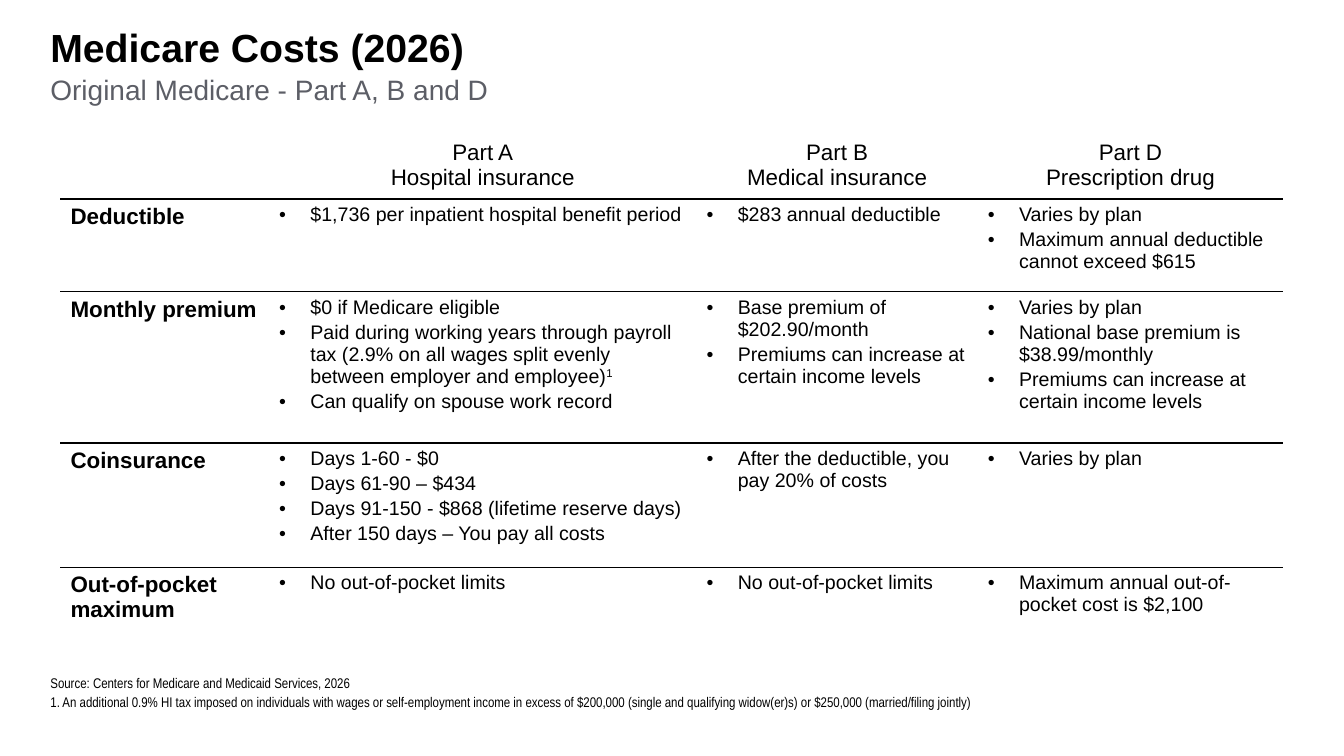
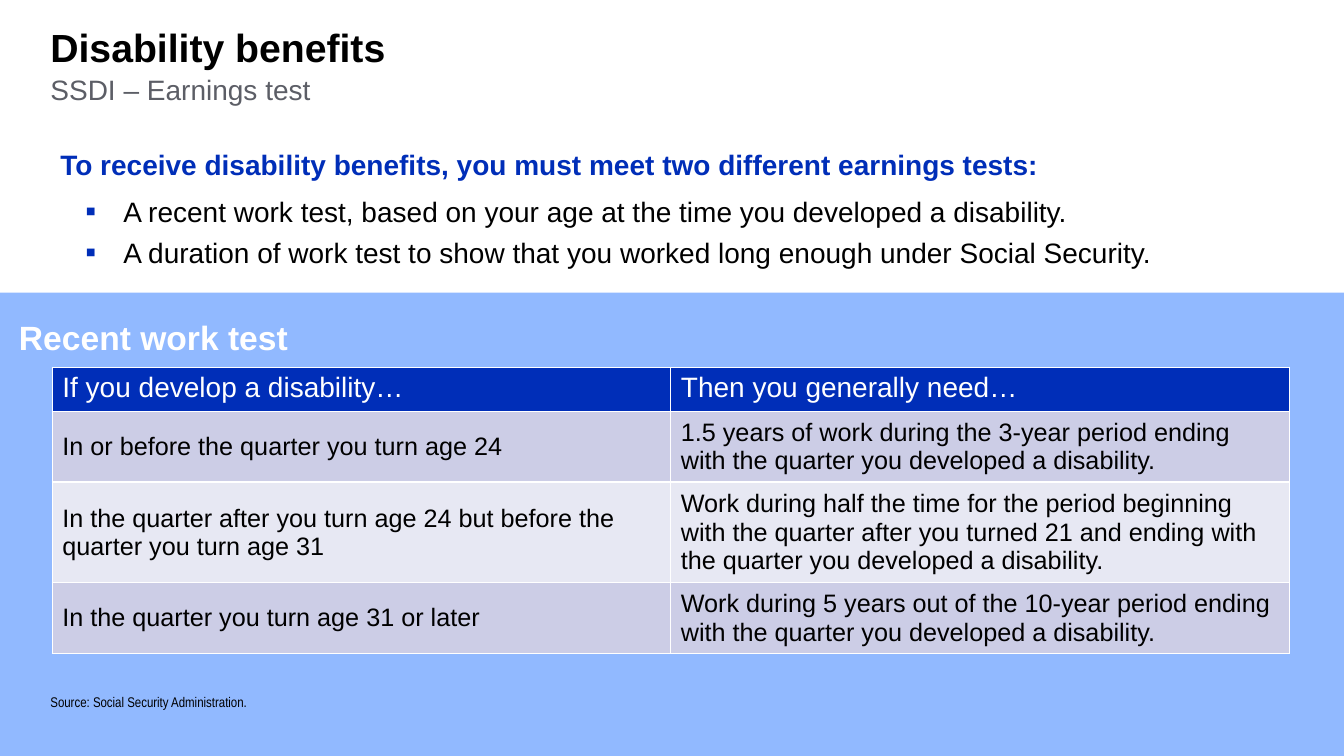
"""Build two slides on Medicare costs and disability earnings tests."""
from pptx import Presentation
from pptx.dml.color import RGBColor
from pptx.enum.shapes import MSO_SHAPE
from pptx.enum.text import MSO_ANCHOR, PP_ALIGN
from pptx.oxml.ns import qn
from pptx.util import Pt
from lxml.etree import SubElement

COLORS = {
    "text": "000000", "white": "FFFFFF", "subtitle": "5C5E66",
    "blue": "002EB8", "band": "91B9FF", "row": "CCCDE6", "row_alt": "E7E8F3",
}
PLAIN_TABLE = "{2D5ABB26-0587-4C30-8999-92F81FD0307C}"
MARGIN = 36
DOT = {"char": "•", "left": 22.3, "hang": 22.3, "color": "text", "size": 100}
SQUARE = {"char": "▪", "left": 45, "hang": 27, "color": "blue", "size": 110}

COSTS = [
    ("Deductible",
     ["$1,736 per inpatient hospital benefit period"],
     ["$283 annual deductible"],
     ["Varies by plan", "Maximum annual deductible cannot exceed $615"]),
    ("Monthly premium",
     ["$0 if Medicare eligible",
      "Paid during working years through payroll tax (2.9% on all wages "
      "split evenly between employer and employee)^1",
      "Can qualify on spouse work record"],
     ["Base premium of $202.90/month",
      "Premiums can increase at certain income levels"],
     ["Varies by plan", "National base premium is $38.99/monthly",
      "Premiums can increase at certain income levels"]),
    ("Coinsurance",
     ["Days 1-60 - $0", "Days 61-90 – $434",
      "Days 91-150 - $868 (lifetime reserve days)",
      "After 150 days – You pay all costs"],
     ["After the deductible, you pay 20% of costs"],
     ["Varies by plan"]),
    ("Out-of-pocket maximum",
     ["No out-of-pocket limits"],
     ["No out-of-pocket limits"],
     ["Maximum annual out-of-pocket cost is $2,100"]),
]
PARTS = [("Part A", "Hospital insurance"), ("Part B", "Medical insurance"),
         ("Part D", "Prescription drug")]
WORK_TEST = [
    ("If you develop a disability…", "Then you generally need…"),
    ("In or before the quarter you turn age 24",
     "1.5 years of work during the 3-year period ending with the quarter "
     "you developed a disability."),
    ("In the quarter after you turn age 24 but before the quarter you turn age 31",
     "Work during half the time for the period beginning with the quarter "
     "after you turned 21 and ending with the quarter you developed a disability."),
    ("In the quarter you turn age 31 or later",
     "Work during 5 years out of the 10-year period ending with the quarter "
     "you developed a disability."),
]


def rgb(name):
    return RGBColor.from_string(COLORS[name])


def add_bullet(p, bullet):
    pPr = p._p.get_or_add_pPr()
    pPr.set("marL", str(Pt(bullet["left"])))
    pPr.set("indent", str(-Pt(bullet["hang"])))
    clr = SubElement(pPr, qn("a:buClr"))
    SubElement(clr, qn("a:srgbClr"), val=COLORS[bullet["color"]])
    SubElement(pPr, qn("a:buSzPct"), val=str(bullet["size"] * 1000))
    SubElement(pPr, qn("a:buFont"), typeface="Arial")
    SubElement(pPr, qn("a:buChar"), char=bullet["char"])


def write(tf, lines, size, color="text", bold=False, font="Arial", after=0,
          align=PP_ALIGN.LEFT, bullet=None, spacing=None, more=False):
    for i, line in enumerate(lines):
        p = tf.add_paragraph() if i or more else tf.paragraphs[0]
        if bullet:
            add_bullet(p, bullet)
        p.alignment = align
        p.space_after = Pt(after)
        if spacing:
            p.line_spacing = spacing
        body, _, note = line.partition("^")
        for text in filter(None, (body, note)):
            r = p.add_run()
            r.text = text
            r.font.size = Pt(size)
            r.font.name = font
            r.font.bold = bold
            r.font.color.rgb = rgb(color)
        if note:
            r._r.get_or_add_rPr().set("baseline", "30000")


def add_text(s, x, y, w, h, inset=True, anchor=MSO_ANCHOR.TOP):
    tf = s.shapes.add_textbox(Pt(x), Pt(y), Pt(w), Pt(h)).text_frame
    tf.word_wrap = True
    tf.vertical_anchor = anchor
    if not inset:
        tf.margin_left = tf.margin_right = tf.margin_top = tf.margin_bottom = 0
    return tf


def add_slide(prs, title, subtitle):
    s = prs.slides.add_slide(prs.slide_layouts[6])
    write(add_text(s, MARGIN, 16.5, 740, 34, False), [title], 28, bold=True)
    write(add_text(s, MARGIN, 52, 740, 24.5, False), [subtitle], 20, "subtitle")
    return s


def add_source(s, lines):
    tf = add_text(s, MARGIN, 481.6, 888, 26, False, MSO_ANCHOR.BOTTOM)
    write(tf, lines, 10, font="Arial Narrow", after=1.5)


def add_table(s, x, y, widths, heights):
    frame = s.shapes.add_table(len(heights), len(widths), Pt(x), Pt(y),
                               Pt(sum(widths)), Pt(sum(heights)))
    table = frame.table
    table.first_row = table.horz_banding = False
    table._tbl.tblPr.find(qn("a:tableStyleId")).text = PLAIN_TABLE
    for col, w in zip(table.columns, widths):
        col.width = Pt(w)
    for row, h in zip(table.rows, heights):
        row.height = Pt(h)
    return table


def style_cell(cell, fill, sides, line):
    tcPr = cell._tc.get_or_add_tcPr()
    for side in sides:
        ln = SubElement(tcPr, qn(f"a:ln{side}"), w=str(Pt(1)))
        solid = SubElement(ln, qn("a:solidFill"))
        SubElement(solid, qn("a:srgbClr"), val=COLORS[line])
    cell.fill.solid()
    cell.fill.fore_color.rgb = rgb(fill)


def add_costs_table(s):
    heights = [42, 66.4, 108, 88.6, 80]
    table = add_table(s, 43.2, 96.5, [149, 305.3, 200.9, 218.2], heights)
    last = len(heights) - 1
    for i in range(len(heights)):
        sides = ("T" if i else "") + ("B" if i < last else "")
        for cell in table.rows[i].cells:
            style_cell(cell, "white", sides, "text")
    for j, part in enumerate(PARTS, 1):
        write(table.cell(0, j).text_frame, part, 16, align=PP_ALIGN.CENTER)
    for i, (label, *items) in enumerate(COSTS, 1):
        write(table.cell(i, 0).text_frame, [label], 16, bold=True, after=2)
        for j, lines in enumerate(items, 1):
            write(table.cell(i, j).text_frame, lines, 14, after=2, bullet=DOT)


def add_work_table(s):
    table = add_table(s, 37.4, 262.3, [441.8] * 2, [31.5, 50.5, 72, 50.5])
    for i, texts in enumerate(WORK_TEST):
        fill = ("row" if i % 2 else "row_alt") if i else "blue"
        for j, text in enumerate(texts):
            cell = table.cell(i, j)
            style_cell(cell, fill, "LRTB", "white")
            if i:
                cell.vertical_anchor = MSO_ANCHOR.MIDDLE
            write(cell.text_frame, [text], 18 if i else 20,
                  "text" if i else "white")


def add_band(s, y, w, h):
    sp = s.shapes.add_shape(MSO_SHAPE.RECTANGLE, 0, Pt(y), Pt(w), Pt(h))
    sp.shadow.inherit = False
    sp.fill.solid()
    sp.fill.fore_color.rgb = rgb("band")
    sp.line.fill.background()


def build_costs(prs):
    s = add_slide(prs, "Medicare Costs (2026)", "Original Medicare - Part A, B and D")
    add_costs_table(s)
    add_source(s, [
        "Source: Centers for Medicare and Medicaid Services, 2026",
        "1. An additional 0.9% HI tax imposed on individuals with wages or "
        "self-employment income in excess of $200,000 (single and qualifying "
        "widow(er)s) or $250,000 (married/filing jointly)"])


def build_disability(prs):
    s = add_slide(prs, "Disability benefits", "SSDI – Earnings test")
    tf = add_text(s, MARGIN, 100.8, 885.6, 104)
    write(tf, ["To receive disability benefits, you must meet two different "
               "earnings tests:"], 20, "blue", True, after=8, spacing=1.05)
    write(tf, ["A recent work test, based on your age at the time you developed "
               "a disability.",
               "A duration of work test to show that you worked long enough "
               "under Social Security."],
          20, after=4, bullet=SQUARE, spacing=1.05, more=True)
    add_band(s, 209, 960, 331)
    write(add_text(s, 6.5, 222.5, 230, 36), ["Recent work test"], 24, "white", True)
    add_work_table(s)
    add_source(s, ["Source: Social Security Administration."])


def main():
    prs = Presentation()
    prs.slide_width, prs.slide_height = Pt(960), Pt(540)
    build_costs(prs)
    build_disability(prs)
    prs.save("out.pptx")


if __name__ == "__main__":
    main()
